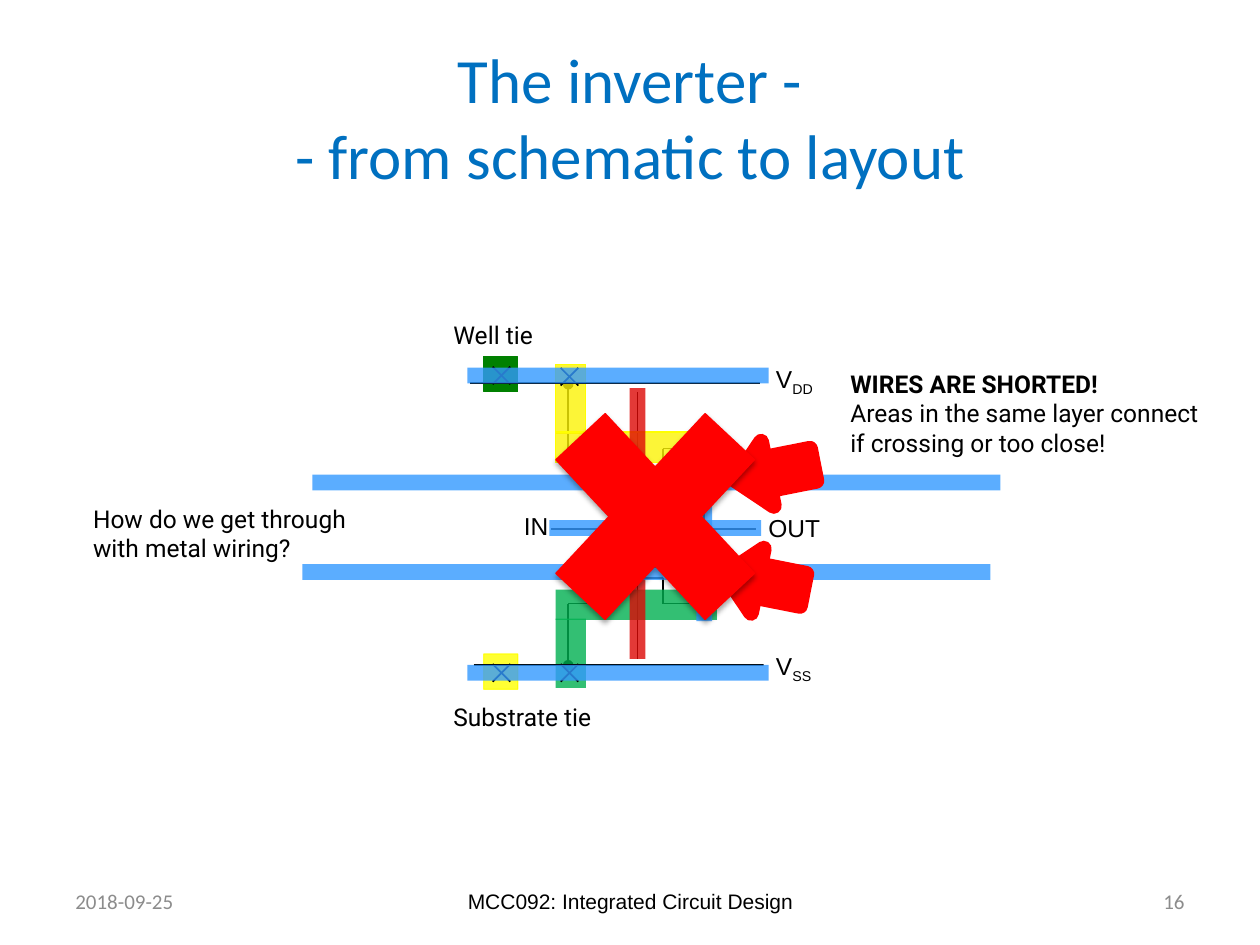
from lxml import etree
from pptx import Presentation
from pptx import util as u
from pptx.dml.color import RGBColor
from pptx.enum import shapes, text
from pptx.oxml import ns

BLACK = RGBColor(0, 0, 0)
WHITE = RGBColor(255, 255, 255)
GREY = RGBColor(0x8C, 0x8C, 0x8C)
TITLE_BLUE = RGBColor(0x00, 0x70, 0xC0)
METAL = RGBColor(0x33, 0x99, 0xFF)
POLY = RGBColor(0xDD, 0x08, 0x06)
POLY_EDGE = RGBColor(0xCC, 0x33, 0x00)
P_DIFF = RGBColor(0xFC, 0xF3, 0x05)
N_DIFF = RGBColor(0x00, 0xB0, 0x50)
N_TIE = RGBColor(0x00, 0x80, 0x00)
YELLOW = RGBColor(255, 255, 0)
RED = RGBColor(255, 0, 0)

TIE, SOURCE, GATE, DRAIN = 3.98, 4.51, 5.06, 5.59
CHANNEL = (4.86, 5.26)
VDD, PMOS, MID, NMOS, VSS = 2.98, 3.56, 4.2, 4.79, 5.34
HALF_CROSS = 0.07
DOT = 0.07
DIFF_W = 0.24
OPACITY = 80
LEFT, CENTER, RIGHT = text.PP_ALIGN.LEFT, text.PP_ALIGN.CENTER, text.PP_ALIGN.RIGHT
TOP, MIDDLE = text.MSO_ANCHOR.TOP, text.MSO_ANCHOR.MIDDLE
KIND = shapes.MSO_SHAPE

TITLE = ["The inverter -", "- from schematic to layout"]
PMOS_WIRES = [
    [(SOURCE, PMOS), (CHANNEL[0], PMOS), (CHANNEL[0], 3.76),
     (CHANNEL[1], 3.76), (CHANNEL[1], PMOS), (DRAIN, PMOS)],
    [(CHANNEL[0], 3.86), (CHANNEL[1], 3.86)],
]
NMOS_WIRES = [
    [(SOURCE, NMOS), (4.88, NMOS), (4.88, 4.59),
     (CHANNEL[1], 4.59), (CHANNEL[1], NMOS), (DRAIN, NMOS)],
    [(4.88, 4.5), (CHANNEL[1], 4.5)],
]
OUTPUT_WIRES = [
    [(DRAIN, MID), (6, MID)],
    [(DRAIN, PMOS), (DRAIN, NMOS)],
    [(SOURCE, 5.29), (SOURCE, NMOS)],
    [(SOURCE, PMOS), (SOURCE, 3.03)],
]
SUPPLY_WIRES = [[(3.73, 3.04), (6.03, 3.04)], [(3.76, 5.28), (6.07, 5.28)]]
CONTACTS = [(TIE, VSS), (TIE, VDD), (4.52, VSS), (4.52, 2.99), (5.6, 4.78), (5.6, PMOS)]
METAL_RAILS = [[(3.71, y), (6.1, y)] for y in (VDD, VSS)]
METAL_WIRES = [[(5.16, 4.19), (4.36, 4.19)],
               [(2.48, 3.83), (7.94, 3.83)], [(2.4, 4.54), (7.86, 4.54)]]
SHORTS = [(5.83, 3.49, 168.8), (5.75, 4.36, 191.2)]

WELL_TIE = ((3.5, 2.49, 2.4, 0.38), "Roboto", [[("Well tie", None)]])
SUBSTRATE_TIE = ((3.5, 5.52, 3.07, 0.41), "Roboto", [[("Substrate tie", None)]])
SUPPLIES = [
    ((6.06, 2.84, 1.07, 0.65), "Arial", [[("V", None), ("DD", "sub")]]),
    ((6.06, 5.12, 0.65, 0.4), "Arial", [[("V", None), ("SS", "sub")]]),
]
NOTES = [
    ((0.64, 3.95, 2.4, 0.74), "Roboto",
     [[("How do we get through with metal wiring?", None)]]),
    ((6.65, 2.88, 3.07, 0.74), "Roboto",
     [[("WIRES ARE SHORTED!", "bold")],
      [("Areas in the same layer connect if crossing or too close!", None)]]),
    ((4.06, 4.01, 0.72, 0.52), "Arial", [[("IN", None)]]),
    ((6, 4.02, 0.89, 0.36), "Arial", [[("OUT", None)]]),
]
FOOTER = [
    (0.5, 2.33, "2018-09-25", "Calibri", GREY, LEFT),
    (3.42, 3.17, "MCC092: Integrated Circuit Design", "Arial", BLACK, CENTER),
    (7.17, 2.33, "16", "Calibri", GREY, RIGHT),
]

deck = Presentation()
deck.slide_width, deck.slide_height = u.Inches(10), u.Inches(7.5)
slide = deck.slides.add_slide(deck.slide_layouts[5])


def inches(values):
    return [u.Inches(v) for v in values]


def set_opacity(paint, percent):
    color = paint._xPr.find(".//" + ns.qn("a:srgbClr"))
    etree.SubElement(color, ns.qn("a:alpha")).set("val", str(percent * 1000))


def wire(points, color=BLACK, width=1, opacity=100):
    for start, end in zip(points, points[1:]):
        segment = slide.shapes.add_connector(
            shapes.MSO_CONNECTOR.STRAIGHT, *inches(start + end))
        segment.line.width = u.Pt(width)
        segment.line.fill.solid()
        segment.line.color.rgb = color
        if opacity < 100:
            set_opacity(segment.line.fill, opacity)
        etree.SubElement(segment._element.spPr, ns.qn("a:effectLst"))


def wires(paths):
    for points in paths:
        wire(points)


def metal(points):
    wire(points, METAL, 9, OPACITY)


def cross(x, y):
    d = HALF_CROSS
    wire([(x - d, y - d), (x + d, y + d)])
    wire([(x - d, y + d), (x + d, y - d)])


def area(kind, box, fill, edge=None, width=0.75, opacity=100):
    region = slide.shapes.add_shape(kind, *inches(box))
    region.shadow.inherit = False
    region.fill.solid()
    region.fill.fore_color.rgb = fill
    if opacity < 100:
        set_opacity(region.fill, opacity)
    if edge is None:
        region.line.fill.background()
    else:
        region.line.width = u.Pt(width)
        region.line.color.rgb = edge
    return region


def dot(x, y):
    area(KIND.OVAL, (x - DOT / 2, y - DOT / 2, DOT, DOT), BLACK, BLACK, 1)


def write(holder, font, paragraphs, size=14, color=BLACK, align=LEFT, anchor=TOP):
    frame = holder.text_frame
    frame.word_wrap = True
    frame.vertical_anchor = anchor
    for i, runs in enumerate(paragraphs):
        line = frame.add_paragraph() if i else frame.paragraphs[0]
        line.alignment = align
        for words, style in runs:
            run = line.add_run()
            run.text = words
            run.font.name, run.font.size = font, u.Pt(size)
            run.font.color.rgb = color
            run.font.bold = style == "bold"
            if style == "sub":
                run._r.get_or_add_rPr().set("baseline", "-25000")


def label(box, font, paragraphs, **style):
    write(slide.shapes.add_textbox(*inches(box)), font, paragraphs, **style)


heading = slide.shapes.title
heading.left, heading.top, heading.width, heading.height = inches((0.5, 0.3, 9, 1.25))
write(heading, "Calibri", [[(TITLE[0], None)]], 36, TITLE_BLUE, CENTER, MIDDLE)
heading_line = heading.text_frame.paragraphs[0]
heading_line.add_line_break()
second = heading_line.add_run()
second.text = TITLE[1]
second.font.name, second.font.size = "Calibri", u.Pt(36)
second.font.color.rgb = TITLE_BLUE

wire([(GATE, 3.11), (GATE, 5.23)])
wires(PMOS_WIRES[:1])
area(KIND.OVAL, (4.99, 3.87, 0.12, 0.12), WHITE, BLACK, 1)
wires(PMOS_WIRES[1:])
dot(5.6, MID)
wires(OUTPUT_WIRES)
dot(SOURCE, 5.28)
area(KIND.RECTANGLE, (4.41, 4.91, DIFF_W, 0.55), N_DIFF, opacity=OPACITY)
dot(SOURCE, 3.05)
area(KIND.RECTANGLE, (4.41, 2.89, DIFF_W, 0.55), P_DIFF, YELLOW, opacity=OPACITY)
label(*WELL_TIE)
area(KIND.RECTANGLE, (3.84, 2.83, 0.27, 0.28), N_TIE, N_TIE)
p_tie = area(KIND.RECTANGLE, (3.84, 5.19, 0.27, 0.28), YELLOW, YELLOW, opacity=OPACITY)
set_opacity(p_tie.line.fill, OPACITY)
label(*SUBSTRATE_TIE)
wires(SUPPLY_WIRES)
for box, font, paragraphs in SUPPLIES:
    write(area(KIND.RECTANGLE, box, WHITE), font, paragraphs)
for x, y in CONTACTS:
    cross(x, y)
for note in NOTES:
    label(*note)
wire([(5.05, MID), (4.37, MID)])
dot(5.04, MID)
area(KIND.RECTANGLE, (4.94, 4.08, 0.21, 0.21), POLY, POLY_EDGE, opacity=OPACITY)
cross(5.04, 4.19)
metal([(5.55, 4.19), (6.04, 4.19)])
wires(NMOS_WIRES)
for rail in METAL_RAILS:
    metal(rail)
area(KIND.RECTANGLE, (4.41, 4.68, 1.28, DIFF_W), N_DIFF, opacity=OPACITY)
area(KIND.RECTANGLE, (4.41, 3.43, 1.28, DIFF_W), P_DIFF, YELLOW, opacity=OPACITY)
metal([(DRAIN, 3.43), (DRAIN, 4.93)])
wire([(GATE, 3.08), (GATE, 5.23)], POLY, 9, OPACITY)
for strip in METAL_WIRES:
    metal(strip)
for left, width, words, font, color, align in FOOTER:
    label((left, 6.95, width, 0.4), font, [[(words, None)]],
          size=12, color=color, align=align, anchor=MIDDLE)

for left, top, angle in SHORTS:
    pointer = area(KIND.RIGHT_ARROW, (left, top, 0.63, 0.52), RED, RED, 9)
    pointer.rotation = angle
    etree.SubElement(pointer.line._ln, ns.qn("a:round"))
rejection = area(KIND.MATH_MULTIPLY, (4.06, 2.88, 2.28, 2.44), RED, RED)
effects = rejection._element.spPr.find(ns.qn("a:effectLst"))
shadow = etree.SubElement(effects, ns.qn("a:outerShdw"), blurRad=str(u.Pt(3.1)),
                          dist=str(u.Pt(1.8)), dir="5400000", rotWithShape="0")
shade = etree.SubElement(shadow, ns.qn("a:srgbClr"), val=str(BLACK))
etree.SubElement(shade, ns.qn("a:alpha"), val="35000")

deck.save("out.pptx")
